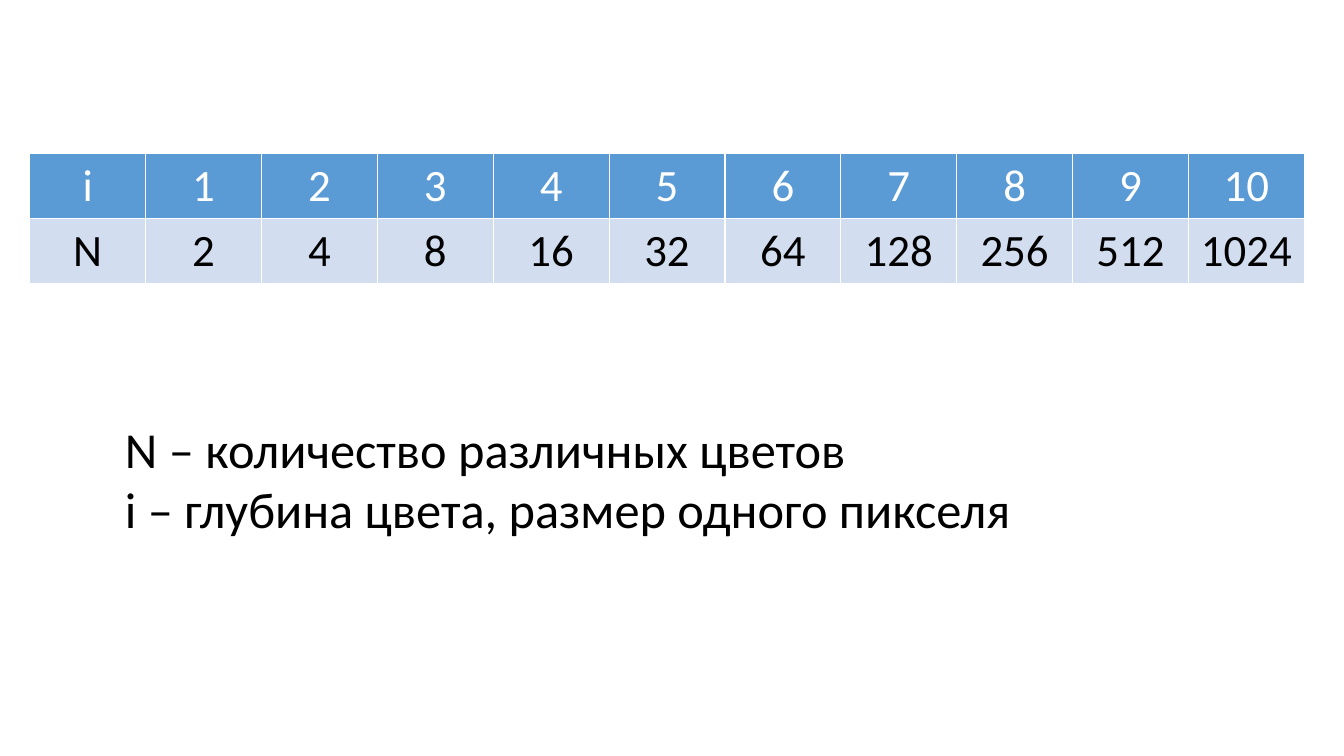
from lxml import etree
from pptx import Presentation
from pptx.dml.color import RGBColor
from pptx.enum.text import MSO_AUTO_SIZE, PP_ALIGN
from pptx.oxml.ns import qn
from pptx.util import Cm, Pt

CENTER = PP_ALIGN.CENTER
GROW = MSO_AUTO_SIZE.SHAPE_TO_FIT_TEXT
WHITE = RGBColor(0xFF, 0xFF, 0xFF)
BLACK = RGBColor(0, 0, 0)
BLUE = RGBColor(0x5B, 0x9B, 0xD5)
PALE = RGBColor(0xD2, 0xDE, 0xEF)
FONT = "Calibri"

DEPTHS = range(1, 11)
ROWS = [
    (["i", *DEPTHS], BLUE, WHITE),
    (["N", *(2 ** i for i in DEPTHS)], PALE, BLACK),
]
NOTES = [
    "N – количество различных цветов",
    "i – глубина цвета, размер одного пикселя",
]
COL_W, ROW_H = Cm(2.92), Cm(1.63)


def add_run(para, text, size, color):
    run = para.add_run()
    run.text = str(text)
    run.font.name = FONT
    run.font.size = Pt(size)
    run.font.color.rgb = color


def add_edges(cell):
    props = cell._tc.get_or_add_tcPr()
    for pos, side in enumerate(("lnL", "lnR", "lnT", "lnB")):
        line = etree.Element(qn("a:" + side), w=str(Pt(1)))
        fill = etree.SubElement(line, qn("a:solidFill"))
        etree.SubElement(fill, qn("a:srgbClr"), val=str(WHITE))
        props.insert(pos, line)


def add_grid(slide):
    count = len(ROWS[0][0])
    frame = slide.shapes.add_table(len(ROWS), count, Cm(0.75), Cm(3.87),
                                   COL_W * count, ROW_H * len(ROWS))
    table = frame.table
    for col in table.columns:
        col.width = COL_W
    for r, (values, fill, color) in enumerate(ROWS):
        table.rows[r].height = ROW_H
        for c, value in enumerate(values):
            cell = table.cell(r, c)
            cell.fill.solid()
            cell.fill.fore_color.rgb = fill
            add_edges(cell)
            para = cell.text_frame.paragraphs[0]
            para.alignment = CENTER
            add_run(para, value, 32, color)


def add_notes(slide):
    box = slide.shapes.add_textbox(Cm(2.9), Cm(10.41), Cm(27.81), Cm(3.33))
    frame = box.text_frame
    frame.word_wrap = True
    frame.auto_size = GROW
    for n, text in enumerate(NOTES):
        para = frame.add_paragraph() if n else frame.paragraphs[0]
        add_run(para, text, 36, BLACK)


def main():
    deck = Presentation()
    deck.slide_width, deck.slide_height = Cm(33.87), Cm(19.05)
    slide = deck.slides.add_slide(deck.slide_layouts[6])
    add_grid(slide)
    add_notes(slide)
    deck.save("out.pptx")


if __name__ == "__main__":
    main()
